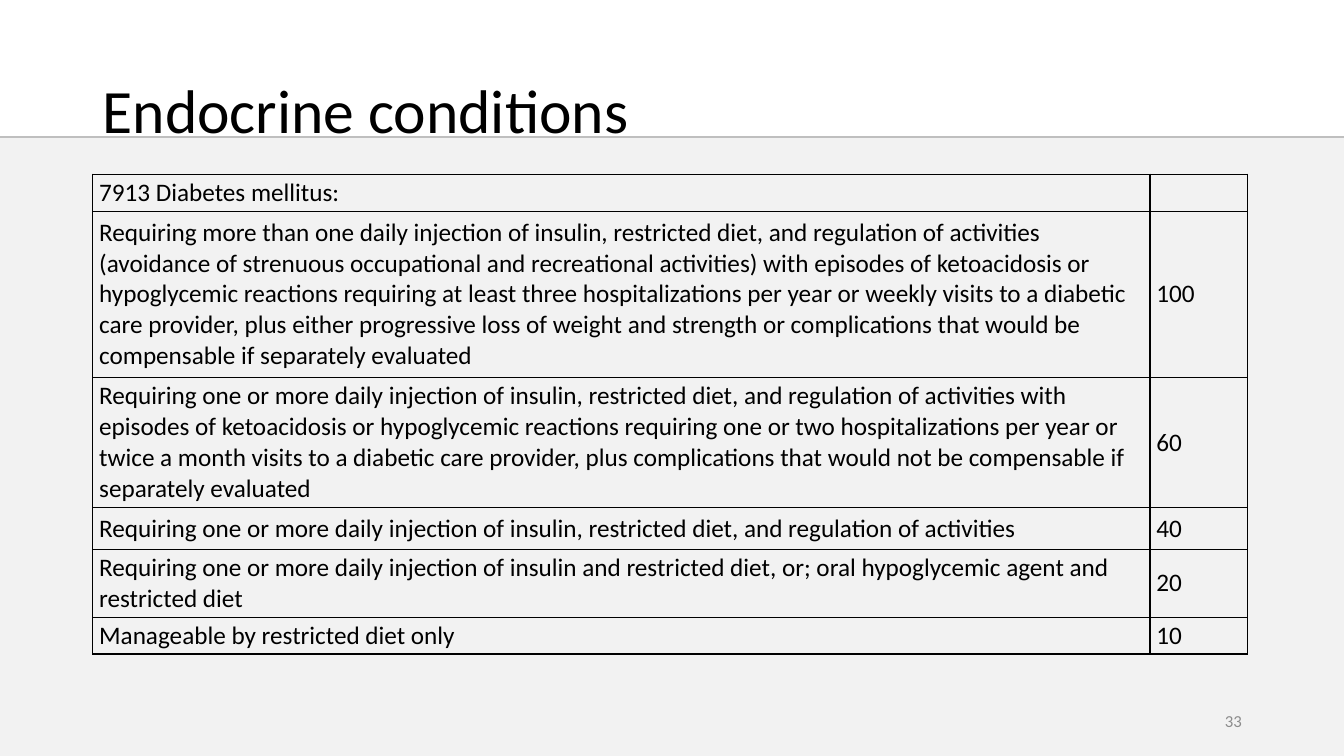
from dataclasses import dataclass

from lxml import etree
from pptx import Presentation
from pptx.dml.color import RGBColor
from pptx.enum.shapes import MSO_CONNECTOR, MSO_SHAPE
from pptx.enum.text import MSO_ANCHOR, PP_ALIGN
from pptx.oxml.ns import qn
from pptx.util import Cm, Pt

RECTANGLE = MSO_SHAPE.RECTANGLE
STRAIGHT = MSO_CONNECTOR.STRAIGHT
MIDDLE = MSO_ANCHOR.MIDDLE
LEFT, RIGHT = PP_ALIGN.LEFT, PP_ALIGN.RIGHT

FONT = "Calibri"
BLACK, GREY, RULE, PANEL = "000000", "8C8C8C", "BFBFBF", "F2F2F2"
PAGE_WIDTH, PAGE_HEIGHT = 33.87, 19.05
PANEL_TOP = 3.46
MARGIN_LEFT, TABLE_TOP = 2.34, 4.39
COLUMN_WIDTHS = (26.64, 2.46)


@dataclass(frozen=True)
class Label:
    text: str
    left: float
    top: float
    width: float
    height: float
    size: float
    color: str
    align: PP_ALIGN
    line_spacing: float = 1.0


@dataclass(frozen=True)
class Rating:
    criteria: str
    percent: str
    height: float


LABELS = (
    Label("Endocrine conditions", MARGIN_LEFT, 1.02, 29.21, 3.68, 44, BLACK, LEFT, 0.9),
    Label("33", 23.93, 17.65, 7.62, 1.02, 12, GREY, RIGHT),
)

RATINGS = (
    Rating("7913 Diabetes mellitus:", "", 0.93),
    Rating(
        "Requiring more than one daily injection of insulin, restricted diet, and "
        "regulation of activities (avoidance of strenuous occupational and recreational "
        "activities) with episodes of ketoacidosis or hypoglycemic reactions requiring at "
        "least three hospitalizations per year or weekly visits to a diabetic care "
        "provider, plus either progressive loss of weight and strength or complications "
        "that would be compensable if separately evaluated",
        "100", 4.19),
    Rating(
        "Requiring one or more daily injection of insulin, restricted diet, and regulation "
        "of activities with episodes of ketoacidosis or hypoglycemic reactions requiring "
        "one or two hospitalizations per year or twice a month visits to a diabetic care "
        "provider, plus complications that would not be compensable if separately evaluated",
        "60", 3.28),
    Rating(
        "Requiring one or more daily injection of insulin, restricted diet, and regulation "
        "of activities",
        "40", 1.05),
    Rating(
        "Requiring one or more daily injection of insulin and restricted diet, or; oral "
        "hypoglycemic agent and restricted diet",
        "20", 1.71),
    Rating("Manageable by restricted diet only", "10", 0.93),
)


def color_of(value: str) -> RGBColor:
    return RGBColor.from_string(value)


def add_span(para, text: str, size: float, color: str) -> None:
    span = para.add_run()
    span.text = text
    span.font.name = FONT
    span.font.size = Pt(size)
    span.font.color.rgb = color_of(color)


def add_background(page) -> None:
    panel = page.shapes.add_shape(
        RECTANGLE, Cm(0), Cm(PANEL_TOP), Cm(PAGE_WIDTH), Cm(PAGE_HEIGHT - PANEL_TOP))
    panel.shadow.inherit = False
    panel.fill.solid()
    panel.fill.fore_color.rgb = color_of(PANEL)
    panel.line.fill.background()
    rule = page.shapes.add_connector(
        STRAIGHT, Cm(0), Cm(PANEL_TOP), Cm(PAGE_WIDTH), Cm(PANEL_TOP))
    rule.line.color.rgb = color_of(RULE)
    rule.line.width = Pt(1.5)
    etree.SubElement(rule._element.spPr, qn("a:effectLst"))


def add_label(page, label: Label) -> None:
    box = page.shapes.add_textbox(
        Cm(label.left), Cm(label.top), Cm(label.width), Cm(label.height))
    frame = box.text_frame
    frame.word_wrap = True
    frame.vertical_anchor = MIDDLE
    para = frame.paragraphs[0]
    para.alignment = label.align
    para.line_spacing = label.line_spacing
    add_span(para, label.text, label.size, label.color)


def add_borders(cell) -> None:
    properties = cell._tc.get_or_add_tcPr()
    for index, side in enumerate(("lnL", "lnR", "lnT", "lnB")):
        border = etree.Element(qn(f"a:{side}"), w=str(Pt(1)))
        fill = etree.SubElement(border, qn("a:solidFill"))
        etree.SubElement(fill, qn("a:srgbClr"), val=BLACK)
        properties.insert(index, border)


def fill_cell(cell, text: str) -> None:
    cell.margin_left = cell.margin_right = Cm(0.16)
    cell.margin_top = cell.margin_bottom = Cm(0.08)
    cell.vertical_anchor = MIDDLE
    cell.fill.background()
    add_borders(cell)
    if text:
        add_span(cell.text_frame.paragraphs[0], text, 18, BLACK)


def add_ratings(page, ratings: tuple[Rating, ...]) -> None:
    table = page.shapes.add_table(
        len(ratings), len(COLUMN_WIDTHS), Cm(MARGIN_LEFT), Cm(TABLE_TOP),
        Cm(sum(COLUMN_WIDTHS)), Cm(sum(rating.height for rating in ratings))).table
    table.first_row = table.horz_banding = False
    for column, width in zip(table.columns, COLUMN_WIDTHS):
        column.width = Cm(width)
    for row, rating in zip(table.rows, ratings):
        row.height = Cm(rating.height)
        for cell, text in zip(row.cells, (rating.criteria, rating.percent)):
            fill_cell(cell, text)


def main() -> None:
    deck = Presentation()
    deck.slide_width, deck.slide_height = Cm(PAGE_WIDTH), Cm(PAGE_HEIGHT)
    page = deck.slides.add_slide(deck.slide_layouts[6])
    add_background(page)
    for label in LABELS:
        add_label(page, label)
    add_ratings(page, RATINGS)
    deck.save("out.pptx")


if __name__ == "__main__":
    main()
